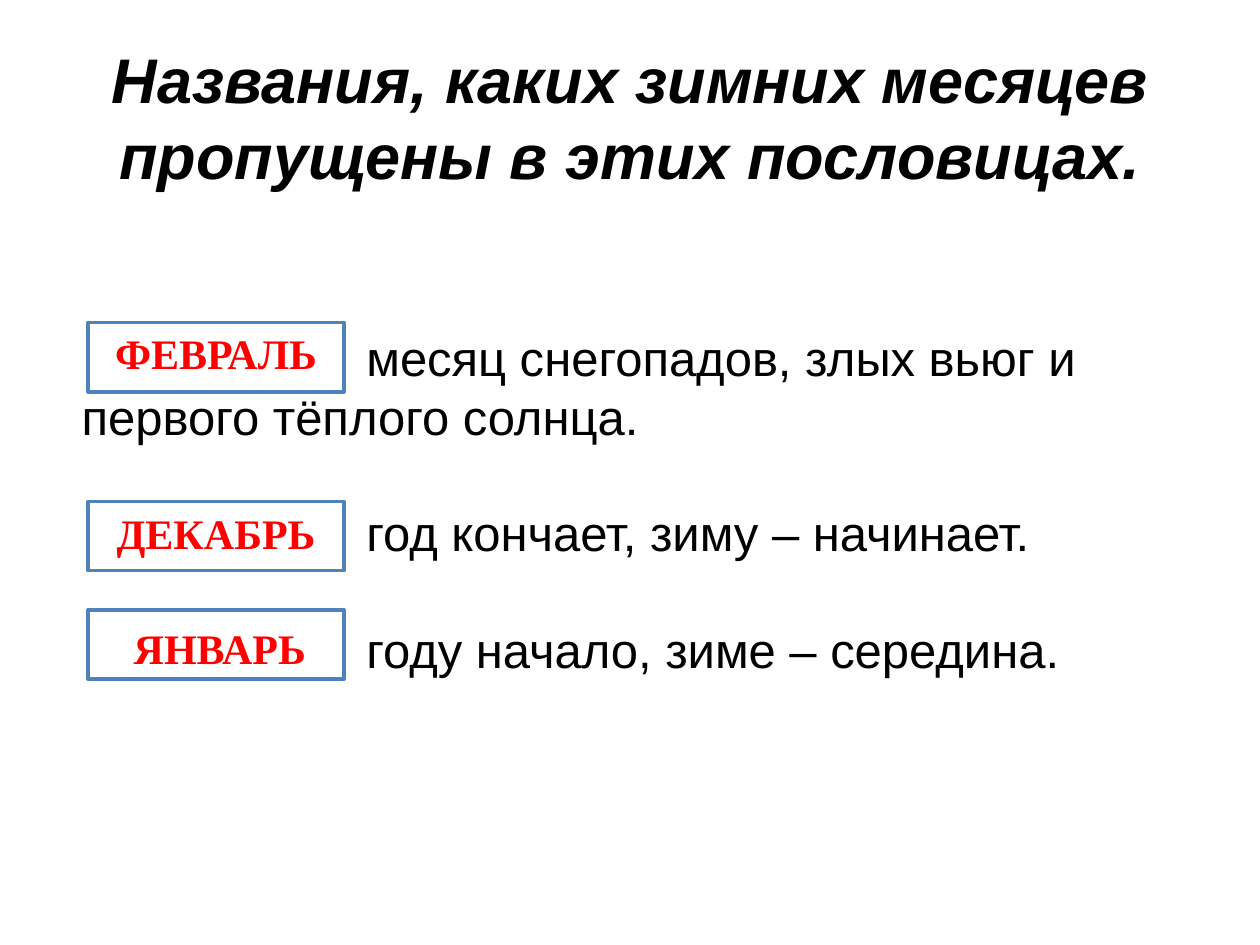
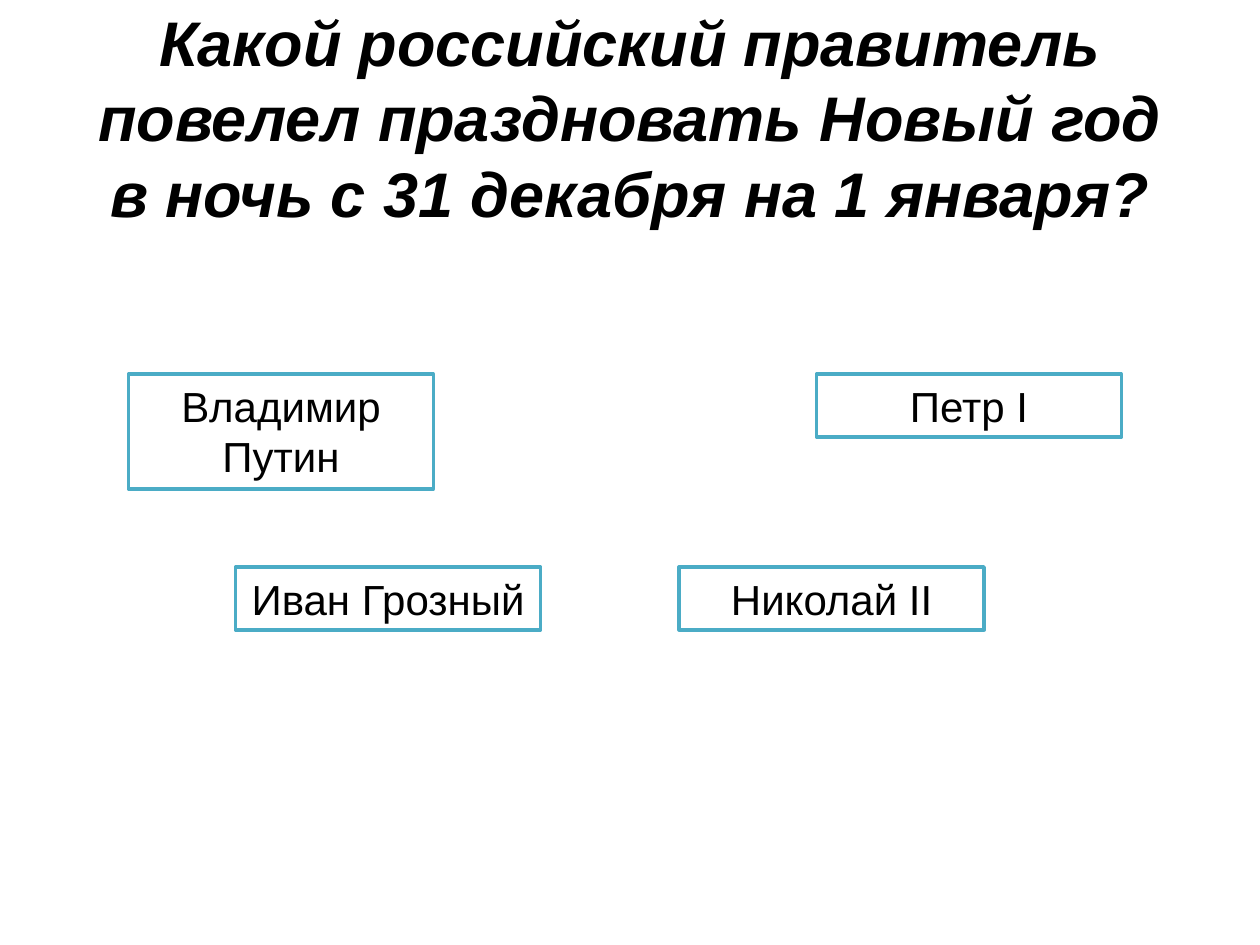
from dataclasses import dataclass

from pptx import Presentation
from pptx.dml.color import RGBColor
from pptx.enum.shapes import MSO_SHAPE
from pptx.enum.text import MSO_ANCHOR, MSO_AUTO_SIZE as AutoSize, PP_ALIGN as Align
from pptx.util import Emu, Pt

PX = 9144  # EMU per px, 100 px to the inch


@dataclass(frozen=True)
class TextStyle:
    size: int
    color: str
    font: str = "Arial"
    bold: bool = False
    italic: bool = False


@dataclass(frozen=True)
class Theme:
    paper: str = "FFFFFF"
    blue: str = "4F81BD"
    teal: str = "4BACC6"
    line_width: int = 2
    title: TextStyle = TextStyle(36, "000000", bold=True, italic=True)
    proverb: TextStyle = TextStyle(28, "000000")
    month: TextStyle = TextStyle(24, "FF0000", "Times New Roman", bold=True)
    ruler: TextStyle = TextStyle(24, "000000")


THEME = Theme()


@dataclass(frozen=True)
class Area:
    left: int
    top: int
    width: int
    height: int

    def emu(self) -> tuple:
        return tuple(Emu(v * PX) for v in (self.left, self.top, self.width, self.height))


@dataclass(frozen=True)
class Month:
    name: str
    frame_top: int
    label_left: int
    label_top: int


@dataclass(frozen=True)
class Ruler:
    name: str
    left: int
    top: int
    height: int = 50


TITLE_AREA = Area(50, 30, 900, 125)
PROVERB_AREA = Area(55, 255, 900, 378)
PROVERB_INDENT = 226  # room on the first line for the month frame
PROVERB_GAP = 33      # points between proverbs
MONTH_LEFT, MONTH_WIDTH, FRAME_HEIGHT, LABEL_HEIGHT = 70, 203, 55, 50
RULER_WIDTH = 242

PROVERBS = (
    "месяц снегопадов, злых вьюг и первого тёплого солнца.",
    "год кончает, зиму – начинает.",
    "году начало, зиме – середина.",
)
MONTHS = (
    Month("ФЕВРАЛЬ", 256, 70, 255),
    Month("ДЕКАБРЬ", 398, 70, 398),
    Month("ЯНВАРЬ", 484, 73, 489),
)
RULERS = (
    Ruler("Владимир Путин", 102, 297, 91),
    Ruler("Иван Грозный", 187, 450),
    Ruler("Николай II", 539, 450),
    Ruler("Петр I", 648, 297),
)


def write(para, text: str, style: TextStyle, align=Align.CENTER) -> None:
    para.alignment = align
    span = para.add_run()
    span.text = text
    span.font.name = style.font
    span.font.size = Pt(style.size)
    span.font.bold = style.bold
    span.font.italic = style.italic
    span.font.color.rgb = RGBColor.from_string(style.color)


def add_text_box(page, area: Area, auto_size=AutoSize.NONE):
    box = page.shapes.add_textbox(*area.emu())
    box.text_frame.word_wrap = True
    box.text_frame.auto_size = auto_size
    return box.text_frame


def add_frame(page, area: Area, color: str):
    frame = page.shapes.add_shape(MSO_SHAPE.RECTANGLE, *area.emu())
    frame.shadow.inherit = False
    frame.fill.solid()
    frame.fill.fore_color.rgb = RGBColor.from_string(THEME.paper)
    frame.line.color.rgb = RGBColor.from_string(color)
    frame.line.width = Pt(THEME.line_width)
    return frame.text_frame


def add_page(deck, title: str):
    page = deck.slides.add_slide(deck.slide_layouts[6])
    text = add_text_box(page, TITLE_AREA)
    text.vertical_anchor = MSO_ANCHOR.MIDDLE
    write(text.paragraphs[0], title, THEME.title)
    return page


def add_proverbs(page) -> None:
    text = add_text_box(page, PROVERB_AREA)
    for index, proverb in enumerate(PROVERBS):
        para = text.add_paragraph() if index else text.paragraphs[0]
        properties = para._p.get_or_add_pPr()
        properties.set("marL", "0")
        properties.set("indent", str(PROVERB_INDENT * PX))
        if index:
            para.space_before = Pt(PROVERB_GAP)
        write(para, proverb, THEME.proverb, Align.LEFT)


def add_month(page, month: Month) -> None:
    add_frame(page, Area(MONTH_LEFT, month.frame_top, MONTH_WIDTH, FRAME_HEIGHT), THEME.blue)
    label = Area(month.label_left, month.label_top, MONTH_WIDTH, LABEL_HEIGHT)
    text = add_text_box(page, label, AutoSize.SHAPE_TO_FIT_TEXT)
    write(text.paragraphs[0], month.name, THEME.month)


def add_ruler(page, ruler: Ruler) -> None:
    area = Area(ruler.left, ruler.top, RULER_WIDTH, ruler.height)
    text = add_frame(page, area, THEME.teal)
    text.word_wrap = True
    text.auto_size = AutoSize.SHAPE_TO_FIT_TEXT
    text.vertical_anchor = MSO_ANCHOR.TOP
    write(text.paragraphs[0], ruler.name, THEME.ruler)


def main() -> None:
    deck = Presentation()
    deck.slide_width, deck.slide_height = Emu(1000 * PX), Emu(750 * PX)

    # Proverbs with the months filled in
    page = add_page(deck, "Названия, каких зимних месяцев пропущены в этих пословицах.")
    add_proverbs(page)
    for month in MONTHS:
        add_month(page, month)

    # Quiz question with four answers
    page = add_page(deck, "Какой российский правитель повелел праздновать Новый год "
                          "в ночь с 31 декабря на 1 января?")
    for ruler in RULERS:
        add_ruler(page, ruler)

    deck.save("out.pptx")


if __name__ == "__main__":
    main()
